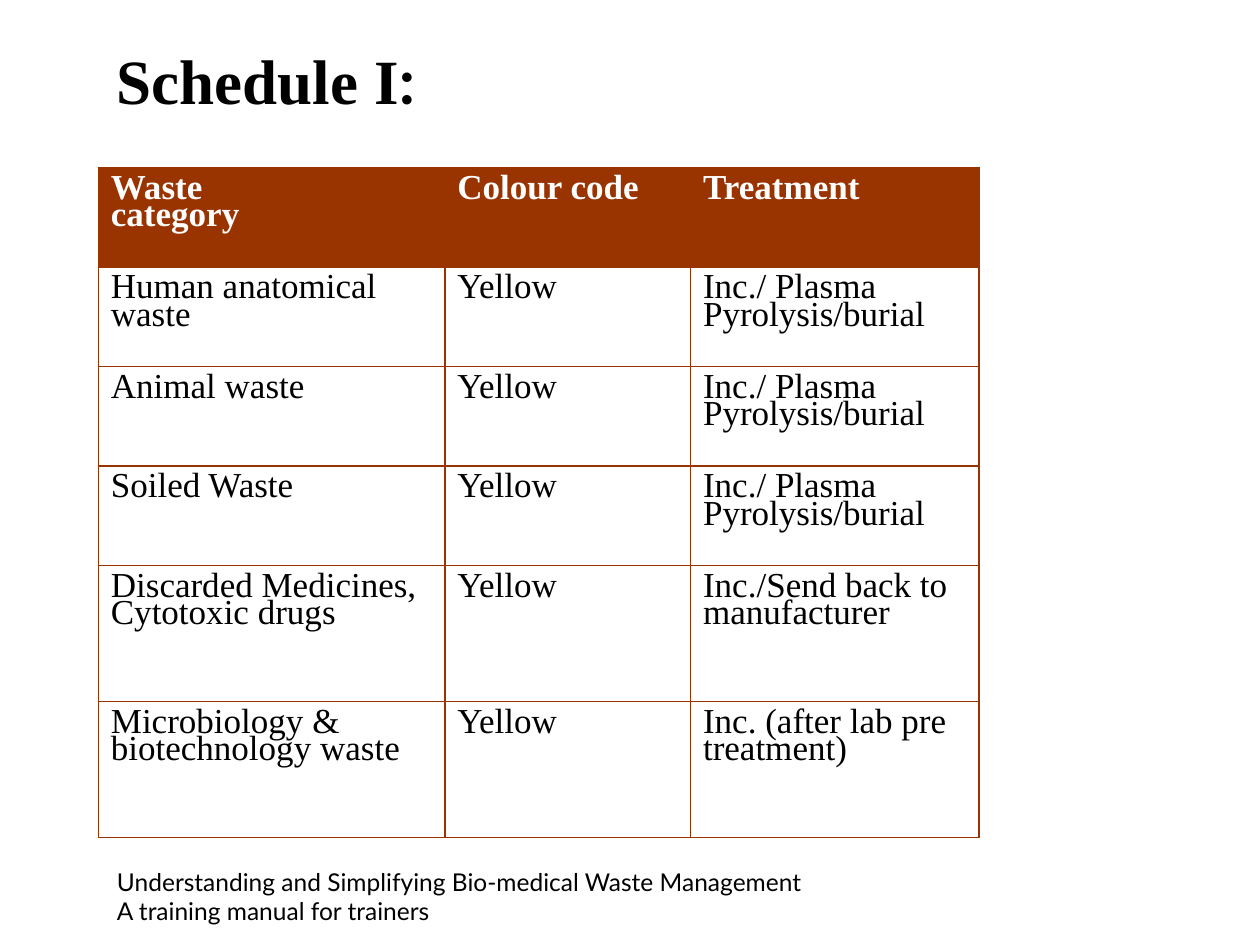
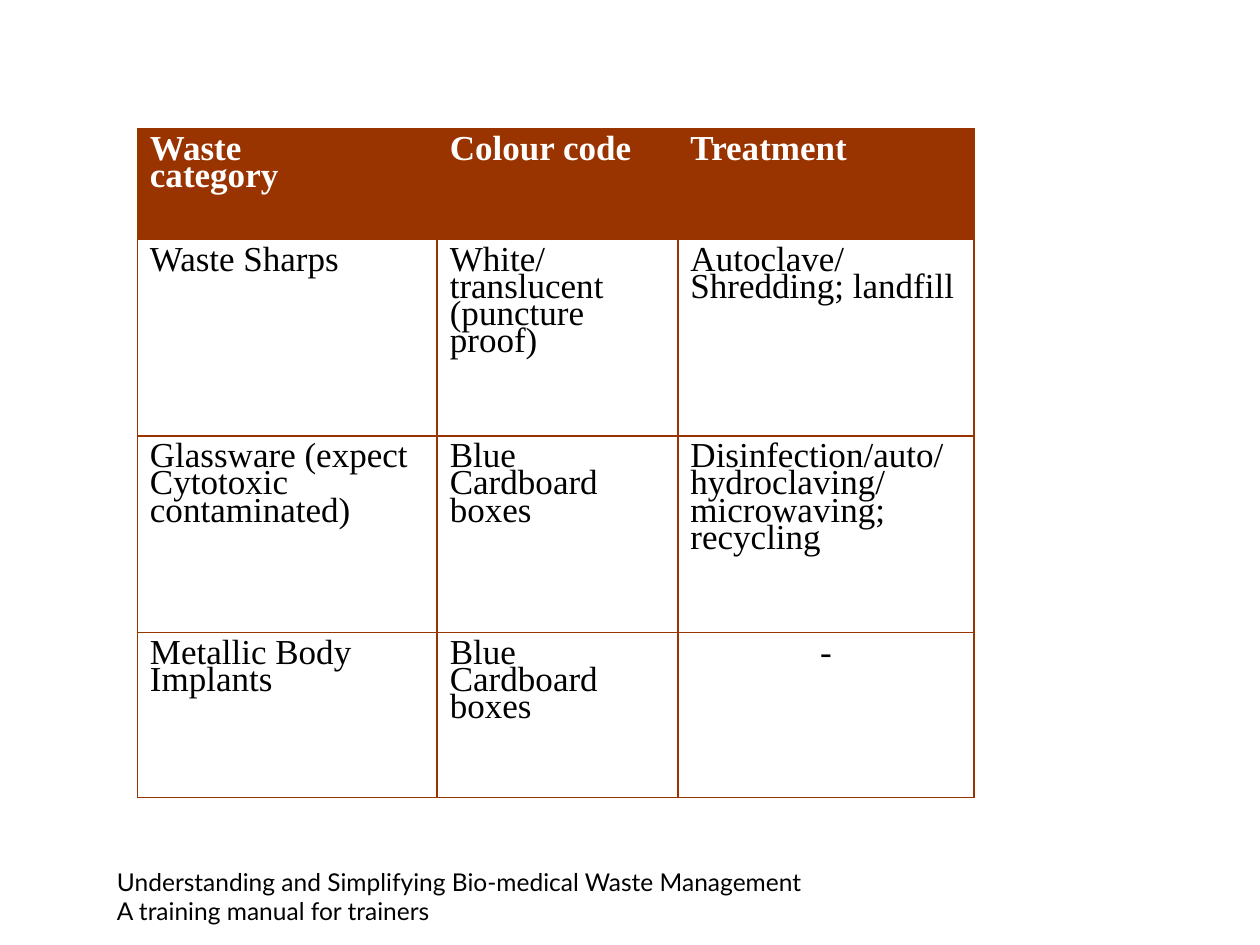
from lxml.etree import SubElement
from pptx import Presentation
from pptx.dml.color import RGBColor
from pptx.enum.text import MSO_ANCHOR, PP_ALIGN
from pptx.oxml.ns import qn
from pptx.util import Inches, Pt

COLOURS = {"rust": "993300", "black": "000000", "white": "FFFFFF"}
SERIF = "Times New Roman"
SANS = "Lato"
HEADINGS = ("Waste\vcategory", "Colour code", "Treatment")
FOOTER = (
    "Understanding and Simplifying Bio-medical Waste Management",
    "A training manual for trainers",
)
PLASMA = "Inc./ Plasma Pyrolysis/burial"
CARDBOARD = "Blue Cardboard boxes"

YELLOW_WASTE = [
    (category, "Yellow", treatment)
    for category, treatment in (
        ("Human anatomical waste", PLASMA),
        ("Animal waste", PLASMA),
        ("Soiled Waste", PLASMA),
        ("Discarded Medicines, Cytotoxic drugs", "Inc./Send back to manufacturer"),
        ("Microbiology & biotechnology waste", "Inc. (after lab pre treatment)"),
    )
]
OTHER_WASTE = [
    ("Waste Sharps", "White/ translucent (puncture proof)", "Autoclave/Shredding; landfill"),
    (
        "Glassware (expect Cytotoxic contaminated)",
        CARDBOARD,
        "Disinfection/auto/hydroclaving/microwaving; recycling",
    ),
    ("Metallic Body Implants", CARDBOARD, "-"),
]


class ScheduleDeck:
    def __init__(self):
        self.deck = Presentation()
        self.deck.slide_width = Inches(10)
        self.deck.slide_height = Inches(7.5)
        self.page = None

    def add_page(self):
        self.page = self.deck.slides.add_slide(self.deck.slide_layouts[6])
        self.add_footer()

    def style_span(self, span, font, size, colour="black", bold=False):
        span.font.name = font
        span.font.size = Pt(size)
        span.font.bold = bold
        span.font.color.rgb = RGBColor.from_string(COLOURS[colour])

    def add_box(self, left, top, width, height):
        box = self.page.shapes.add_textbox(
            Inches(left), Inches(top), Inches(width), Inches(height)
        )
        box.text_frame.word_wrap = True
        return box.text_frame

    def add_title(self, *parts):
        para = self.add_box(0.83, 0.28, 7.09, 1.25).paragraphs[0]
        for text, font in parts:
            span = para.add_run()
            span.text = text
            self.style_span(span, font, 36, bold=True)

    def add_footer(self):
        frame = self.add_box(0.83, 6.83, 5.76, 0.52)
        frame.text = "\n".join(FOOTER)
        for para in frame.paragraphs:
            self.style_span(para.runs[0], SANS, 14)

    def add_borders(self, cell):
        properties = cell._tc.get_or_add_tcPr()
        for side in ("a:lnL", "a:lnR", "a:lnT", "a:lnB"):
            line = SubElement(properties, qn(side), w=str(Pt(1)))
            fill = SubElement(line, qn("a:solidFill"))
            SubElement(fill, qn("a:srgbClr"), val=COLOURS["rust"])

    def fill_cell(self, cell, text, is_heading):
        cell.margin_left = cell.margin_right = Inches(0.1)
        cell.margin_top = cell.margin_bottom = Inches(0.08)
        cell.vertical_anchor = MSO_ANCHOR.TOP
        self.add_borders(cell)
        if is_heading:
            cell.fill.solid()
            cell.fill.fore_color.rgb = RGBColor.from_string(COLOURS["rust"])
        else:
            cell.fill.background()
        cell.text_frame.text = text
        para = cell.text_frame.paragraphs[0]
        para.line_spacing = 0.7
        para.alignment = PP_ALIGN.CENTER if text == "-" else PP_ALIGN.LEFT
        for span in para.runs:
            self.style_span(span, SERIF, 20, "white" if is_heading else "black", is_heading)

    def add_schedule(self, left, top, widths, heights, waste_rows):
        rows = [HEADINGS, *waste_rows]
        table = self.page.shapes.add_table(
            len(rows), len(widths), Inches(left), Inches(top),
            Inches(sum(widths)), Inches(sum(heights)),
        ).table
        table.first_row = table.horz_banding = False
        for column, width in zip(table.columns, widths):
            column.width = Inches(width)
        for row, height in zip(table.rows, heights):
            row.height = Inches(height)
        for row_index, texts in enumerate(rows):
            for column_index, text in enumerate(texts):
                self.fill_cell(table.cell(row_index, column_index), text, row_index == 0)


def main():
    schedule = ScheduleDeck()

    schedule.add_page()
    schedule.add_title(("Schedule I", SERIF), (":", SANS))
    schedule.add_schedule(
        0.78, 1.33, (2.75, 1.95, 2.29), [0.79] * 4 + [1.08] * 2, YELLOW_WASTE
    )

    schedule.add_page()
    schedule.add_schedule(
        1.09, 1.02, (2.38, 1.91, 2.35), (0.88, 1.56, 1.56, 1.31), OTHER_WASTE
    )

    schedule.deck.save("out.pptx")


if __name__ == "__main__":
    main()
